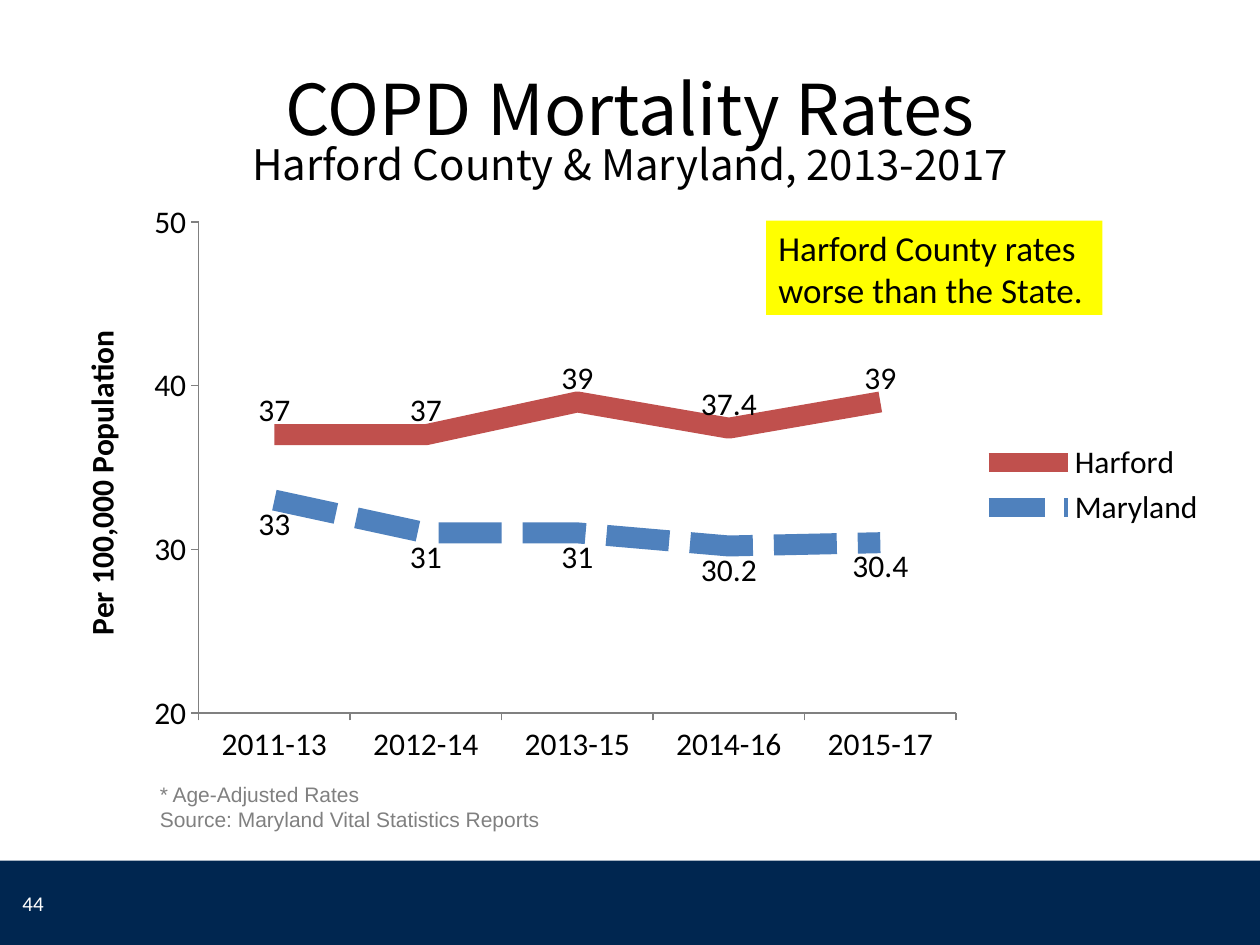
import pptx
import pptx.util
import pptx.chart.data
import pptx.dml.color
import pptx.enum.chart
import pptx.enum.dml
import pptx.enum.shapes
import pptx.enum.text
import pptx.oxml
from pptx.oxml.ns import nsdecls

RGBColor = pptx.dml.color.RGBColor
BLACK = RGBColor(0x00, 0x00, 0x00)
WHITE = RGBColor(0xFF, 0xFF, 0xFF)
NAVY = RGBColor(0x00, 0x26, 0x50)
YELLOW = RGBColor(0xFF, 0xFF, 0x00)
GRAY = RGBColor(0x80, 0x80, 0x80)
RED = RGBColor(0xC0, 0x50, 0x4D)
BLUE = RGBColor(0x4F, 0x81, 0xBD)

WIDTH, HEIGHT = 10, 7.5
FOOTER_TOP = 6.83
PERIODS = ["2011-13", "2012-14", "2013-15", "2014-16", "2015-17"]
RATES = {"Harford": [37, 37, 39, 37.4, 39], "Maryland": [33, 31, 31, 30.2, 30.4]}
PLOT_AREA = {"x": 0.125, "y": 0.05, "w": 0.65, "h": 0.84}


def box(*lengths):
    """Convert left, top, width and height from inches."""
    return [pptx.util.Inches(length) for length in lengths]


def style(font, size, color, name="Calibri", bold=None):
    """Set the look of a font."""
    font.size, font.name, font.bold = pptx.util.Pt(size), name, bold
    font.color.rgb = color


def write(shape, text, size, color, name="Calibri", anchor=pptx.enum.text.MSO_ANCHOR.TOP):
    """Put left-aligned wrapped text into a shape."""
    frame = shape.text_frame
    frame.text = text
    frame.word_wrap = True
    frame.vertical_anchor = anchor
    for paragraph in frame.paragraphs:
        paragraph.alignment = pptx.enum.text.PP_ALIGN.LEFT
        for run in paragraph.runs:
            style(run.font, size, color, name)


def add_title(slide, heading, subheading):
    """Place the two-line title on the title placeholder."""
    title = slide.shapes.title
    title.left, title.top, title.width, title.height = box(0.5, 0, 9, 1.5)
    frame = title.text_frame
    frame.text = f"{heading}\v{subheading}"
    frame.vertical_anchor = pptx.enum.text.MSO_ANCHOR.BOTTOM
    frame.margin_bottom = 0
    paragraph = frame.paragraphs[0]
    paragraph.alignment = pptx.enum.text.PP_ALIGN.CENTER
    paragraph.line_spacing = 0.8
    for run, size in zip(paragraph.runs, (40, 24)):
        style(run.font, size, BLACK, "Noto Sans CJK SC")
        fonts = f'<a:ea {nsdecls("a")} typeface="Noto Sans CJK SC"/>'
        run.font._element.append(pptx.oxml.parse_xml(fonts))


def add_rectangle(slide, place, fill):
    """Add a plain filled rectangle."""
    shape = slide.shapes.add_shape(pptx.enum.shapes.MSO_SHAPE.RECTANGLE, *box(*place))
    shape.shadow.inherit = False
    shape.fill.solid()
    shape.fill.fore_color.rgb = fill
    shape.line.fill.background()
    return shape


def style_axis(axis):
    """Give an axis outside ticks and a thin gray line."""
    axis.has_major_gridlines = False
    axis.major_tick_mark = pptx.enum.chart.XL_TICK_MARK.OUTSIDE
    axis.minor_tick_mark = pptx.enum.chart.XL_TICK_MARK.NONE
    axis.format.line.color.rgb = GRAY
    axis.format.line.width = pptx.util.Pt(0.75)
    style(axis.tick_labels.font, 18, BLACK)


def style_series(series, color, position, dash=None):
    """Give a series a thick line and value labels."""
    series.smooth = False
    series.marker.style = pptx.enum.chart.XL_MARKER_STYLE.NONE
    line = series.format.line
    line.color.rgb = color
    line.width = pptx.util.Pt(12)
    line.dash_style = dash
    labels = series.data_labels
    labels.show_value = True
    labels.position = position
    style(labels.font, 18, BLACK)


def fix_plot_area(chart):
    """Fix the inner plot area as shares of the chart."""
    plot_area = chart._chartSpace.chart.plotArea
    for layout in plot_area.findall(pptx.oxml.ns.qn("c:layout")):
        plot_area.remove(layout)
    sizes = "".join(f'<c:{key} val="{share}"/>' for key, share in PLOT_AREA.items())
    plot_area.insert(0, pptx.oxml.parse_xml(
        f'<c:layout {nsdecls("c")}><c:manualLayout><c:layoutTarget val="inner"/>'
        f'<c:xMode val="edge"/><c:yMode val="edge"/>{sizes}</c:manualLayout></c:layout>'))


def add_rate_chart(slide):
    """Add the line chart of mortality rates."""
    data = pptx.chart.data.CategoryChartData()
    data.categories = PERIODS
    for name, values in RATES.items():
        data.add_series(name, values)
    chart = slide.shapes.add_chart(
        pptx.enum.chart.XL_CHART_TYPE.LINE, *box(0.42, 1.53, 9.25, 4.64), data).chart
    chart.has_title = False
    style(chart.font, 18, BLACK)
    chart.has_legend = True
    chart.legend.position = pptx.enum.chart.XL_LEGEND_POSITION.RIGHT
    chart.legend.include_in_layout = False
    style(chart.legend.font, 18, BLACK)
    chart.plots[0].vary_by_categories = False
    style_axis(chart.category_axis)
    axis = chart.value_axis
    style_axis(axis)
    axis.minimum_scale, axis.maximum_scale, axis.major_unit = 20, 50, 10
    axis.axis_title.text_frame.text = "Per 100,000 Population"
    style(axis.axis_title.text_frame.paragraphs[0].runs[0].font, 18, BLACK, bold=True)
    harford, maryland = chart.plots[0].series
    position = pptx.enum.chart.XL_LABEL_POSITION
    style_series(harford, RED, position.ABOVE)
    style_series(maryland, BLUE, position.BELOW, pptx.enum.dml.MSO_LINE.SQUARE_DOT)
    fix_plot_area(chart)


def main():
    """Build and save the slide."""
    presentation = pptx.Presentation()
    presentation.slide_width, presentation.slide_height = box(WIDTH, HEIGHT)
    slide = presentation.slides.add_slide(presentation.slide_layouts[5])
    add_rectangle(slide, (0, FOOTER_TOP, WIDTH, HEIGHT - FOOTER_TOP), NAVY)
    add_title(slide, "COPD Mortality Rates", "Harford County & Maryland, 2013-2017")
    number = slide.shapes.add_textbox(*box(0.08, 6.97, 2.33, 0.4))
    write(number, "44", 12, WHITE, anchor=pptx.enum.text.MSO_ANCHOR.MIDDLE)
    add_rate_chart(slide)
    source = slide.shapes.add_textbox(*box(1.17, 6.15, 3.83, 0.5))
    write(source, "* Age-Adjusted Rates\nSource: Maryland Vital Statistics Reports", 12, GRAY, "Arial")
    callout = add_rectangle(slide, (6.08, 1.75, 2.67, 0.75), YELLOW)
    write(callout, "Harford County rates worse than the State.", 20, BLACK)
    presentation.save("out.pptx")


if __name__ == "__main__":
    main()
